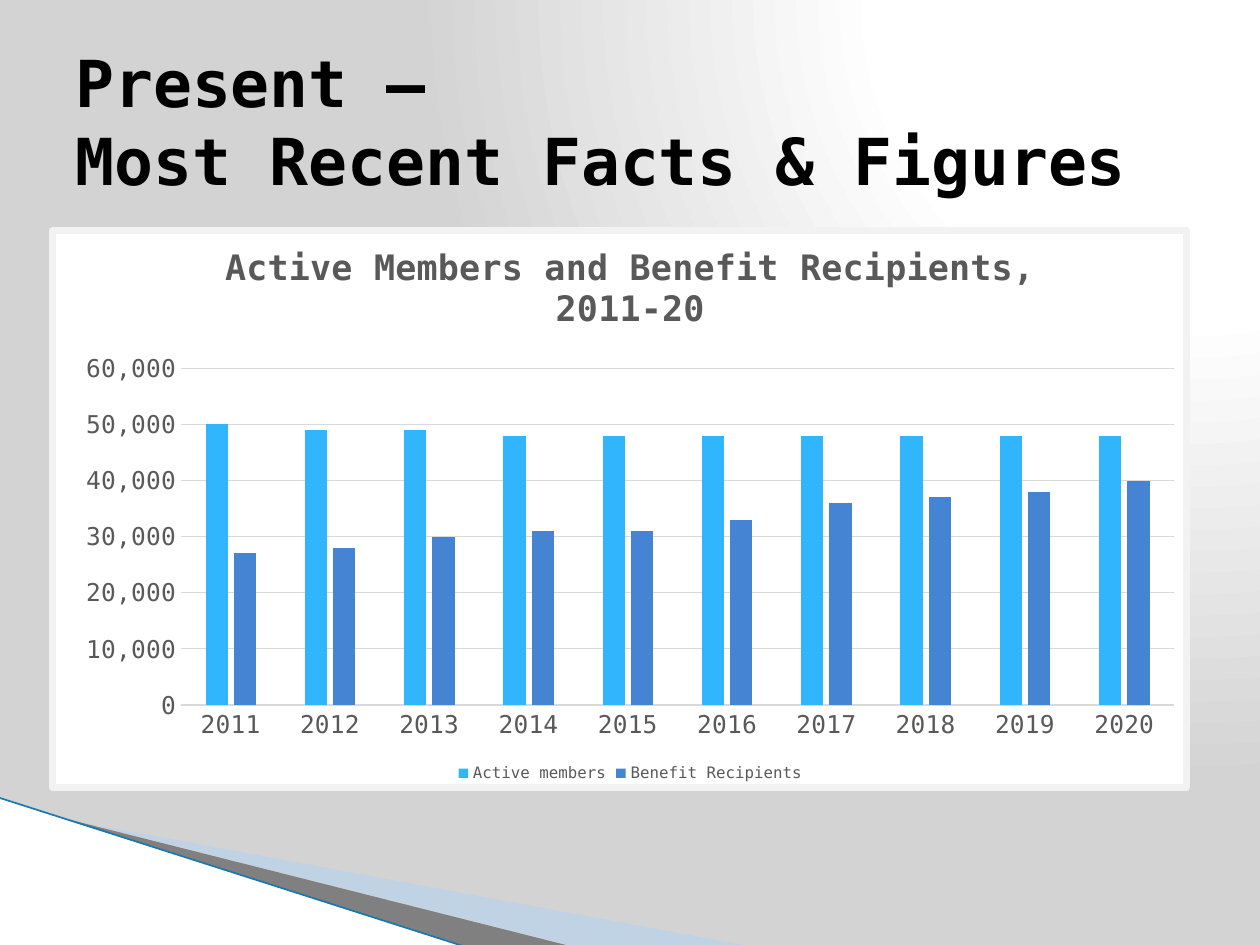
from dataclasses import dataclass

from lxml import etree
from pptx import Presentation
from pptx.chart.data import CategoryChartData
from pptx.dml.color import RGBColor
from pptx.enum.chart import XL_CHART_TYPE, XL_LEGEND_POSITION, XL_TICK_MARK
from pptx.enum.shapes import MSO_CONNECTOR, MSO_SHAPE
from pptx.enum.text import MSO_ANCHOR
from pptx.oxml import parse_xml
from pptx.oxml.ns import nsdecls, qn
from pptx.util import Pt

COLUMNS = XL_CHART_TYPE.COLUMN_CLUSTERED
LEGEND_BOTTOM = XL_LEGEND_POSITION.BOTTOM
NO_TICK = XL_TICK_MARK.NONE
STRAIGHT = MSO_CONNECTOR.STRAIGHT
RECTANGLE = MSO_SHAPE.RECTANGLE
RIGHT_TRIANGLE = MSO_SHAPE.RIGHT_TRIANGLE
MIDDLE = MSO_ANCHOR.MIDDLE

FONT = "DejaVu Sans Mono"
COLORS = {
    "white": "FFFFFF", "backdrop": "D3D3D3", "frame": "F2F2F2",
    "heading": "000000", "label": "595959", "grid": "D9D9D9",
    "pale_wedge": "A3D3FF", "gray_wedge": "808080", "edge": "1A78AD",
    "active": "31B6FD", "recipients": "4584D3",
}


@dataclass(frozen=True)
class Box:
    left: float
    top: float
    width: float
    height: float

    def emu(self) -> tuple:
        return Pt(self.left), Pt(self.top), Pt(self.width), Pt(self.height)


@dataclass(frozen=True)
class Wedge:
    points: tuple
    frame: Box
    color: str
    opacity: int = 100


@dataclass(frozen=True)
class Series:
    name: str
    thousands: tuple
    color: str


WEDGES = (
    Wedge(((39.6, 468.7), (428.4, 540.7), (328.3, 540.7), (39.6, 468)),
          Box(56.2, 393.8, 299.5, 113.8), "pale_wedge", 40),
    Wedge(((38.2, 468), (329, 541.4), (267.8, 541.4), (38.9, 468.7)),
          Box(-4.3, 455.8, 299.5, 66.2), "gray_wedge"),
)
YEARS = [str(year) for year in range(2011, 2021)]
SERIES = (
    Series("Active members", (50, 49, 49, 48, 48, 48, 48, 48, 48, 48), "active"),
    Series("Benefit Recipients", (27, 28, 30, 31, 31, 33, 36, 37, 38, 40), "recipients"),
)
CHART_BOX = Box(36, 131.8, 648, 318.2)
PLOT_BOX = Box(103.5, 210.5, 567.4, 192.4)
TITLE_LEFT, TITLE_TOP = 125, 135.8


def rgb(name: str) -> RGBColor:
    return RGBColor.from_string(COLORS[name])


def style_font(font, size: float, color: str, bold: bool = False) -> None:
    font.name, font.size, font.bold = FONT, Pt(size), bold
    font.color.rgb = rgb(color)


def paint(shape, color: str) -> None:
    shape.shadow.inherit = False
    shape.fill.solid()
    shape.fill.fore_color.rgb = rgb(color)
    shape.line.fill.background()


def draw_background(slide) -> None:
    fill = slide.background.fill
    fill.gradient()
    stops = "".join(
        f'<a:gs pos="{pos * 1000}"><a:srgbClr val="{COLORS[color]}"/></a:gs>'
        for pos, color in ((0, "white"), (40, "white"), (100, "backdrop")))
    radial = parse_xml(
        f'<a:gradFill {nsdecls("a")} rotWithShape="1"><a:gsLst>{stops}</a:gsLst>'
        '<a:path path="circle"><a:fillToRect l="95000" t="-106000" r="5000" b="206000"/>'
        '</a:path></a:gradFill>')
    linear = next(slide.element.iter(qn("a:gradFill")))
    linear.getparent().replace(linear, radial)


def set_frame(shape, frame: Box) -> None:
    """Give a freeform its own frame while its outline stays in place."""
    left, top, width, height = frame.emu()
    outline = next(shape._element.spPr.iter(qn("a:path")))
    for point in outline.iter(qn("a:pt")):
        point.set("x", str(int(point.get("x")) + shape.left - left))
        point.set("y", str(int(point.get("y")) + shape.top - top))
    outline.set("w", str(width))
    outline.set("h", str(height))
    shape.left, shape.top, shape.width, shape.height = left, top, width, height


def draw_wedge(slide, wedge: Wedge) -> None:
    start, *rest = [(Pt(x), Pt(y)) for x, y in wedge.points]
    builder = slide.shapes.build_freeform(*start)
    builder.add_line_segments(rest, close=True)
    shape = builder.convert_to_shape()
    set_frame(shape, wedge.frame)
    paint(shape, wedge.color)
    if wedge.opacity < 100:
        color = next(shape._element.spPr.iter(qn("a:srgbClr")))
        etree.SubElement(color, qn("a:alpha"), val=str(wedge.opacity * 1000))


def draw_corner(slide) -> None:
    corner = slide.shapes.add_shape(RIGHT_TRIANGLE, *Box(-0.7, 455.8, 267.8, 85).emu())
    paint(corner, "white")
    for wedge in WEDGES:
        draw_wedge(slide, wedge)
    edge = slide.shapes.add_connector(STRAIGHT, Pt(-0.7), Pt(455.8), Pt(267.1), Pt(541.4))
    edge.line.color.rgb = rgb("edge")
    edge.line.width = Pt(0.95)
    etree.SubElement(edge._element.spPr, qn("a:effectLst"))


def draw_heading(slide) -> None:
    frame = slide.shapes.add_textbox(*Box(36, 23.8, 648, 90).emu()).text_frame
    frame.word_wrap = True
    frame.vertical_anchor = MIDDLE
    paragraph = frame.paragraphs[0]
    for index, line in enumerate(("Present – ", "Most Recent Facts & Figures")):
        if index:
            paragraph.add_line_break()
        run = paragraph.add_run()
        run.text = line
        style_font(run.font, 37, "heading", bold=True)


def draw_panel(slide) -> None:
    panel = slide.shapes.add_shape(RECTANGLE, *Box(30, 131.8, 648, 318.2).emu())
    paint(panel, "white")
    panel.line.color.rgb = rgb("frame")
    panel.line.width = Pt(4.33)


def place(part, index: int, target: str = "", **fractions: float) -> None:
    """Fix a chart part at fractions of the chart's size."""
    for old in part.findall(qn("c:layout")):
        part.remove(old)
    sizes = "".join(f'<c:{key} val="{value:.4f}"/>' for key, value in fractions.items())
    part.insert(index, parse_xml(
        f'<c:layout {nsdecls("c")}><c:manualLayout>{target}'
        f'<c:xMode val="edge"/><c:yMode val="edge"/>{sizes}</c:manualLayout></c:layout>'))


def place_parts(chart) -> None:
    box, plot = CHART_BOX, PLOT_BOX
    place(chart._chartSpace.chart.plotArea, 0, '<c:layoutTarget val="inner"/>',
          x=(plot.left - box.left) / box.width, y=(plot.top - box.top) / box.height,
          w=plot.width / box.width, h=plot.height / box.height)
    place(chart.chart_title._element, 1,
          x=(TITLE_LEFT - box.left) / box.width, y=(TITLE_TOP - box.top) / box.height)


def draw_chart(slide) -> None:
    data = CategoryChartData(number_format="#,##0")
    data.categories = YEARS
    for series in SERIES:
        data.add_series(series.name, [value * 1000 for value in series.thousands])
    chart = slide.shapes.add_chart(COLUMNS, *CHART_BOX.emu(), data).chart
    style_font(chart.font, 10, "heading")

    # Title and legend
    title_run = chart.chart_title.text_frame.paragraphs[0].add_run()
    title_run.text = "Active Members and Benefit Recipients, 2011-20"
    style_font(title_run.font, 20, "label", bold=True)
    chart.has_legend = True
    chart.legend.position = LEGEND_BOTTOM
    chart.legend.include_in_layout = False
    style_font(chart.legend.font, 9, "label")

    # Columns
    plot = chart.plots[0]
    plot.gap_width, plot.overlap, plot.vary_by_categories = 219, -27, False
    for column, series in zip(plot.series, SERIES):
        column.format.fill.solid()
        column.format.fill.fore_color.rgb = rgb(series.color)

    # Axes and gridlines
    years, members = chart.category_axis, chart.value_axis
    for axis in (years, members):
        axis.major_tick_mark = axis.minor_tick_mark = NO_TICK
        style_font(axis.tick_labels.font, 14, "label")
    members.minimum_scale, members.maximum_scale, members.major_unit = 0, 60000, 10000
    members.tick_labels.number_format = "#,##0"
    members.tick_labels.number_format_is_linked = False
    members.format.line.fill.background()
    for line in (years.format.line, members.major_gridlines.format.line):
        line.color.rgb = rgb("grid")
        line.width = Pt(0.75)
    place_parts(chart)


def main() -> None:
    deck = Presentation()
    deck.slide_width, deck.slide_height = Pt(720), Pt(540)
    slide = deck.slides.add_slide(deck.slide_layouts[6])
    for draw in (draw_background, draw_corner, draw_heading, draw_panel, draw_chart):
        draw(slide)
    deck.save("out.pptx")


if __name__ == "__main__":
    main()
